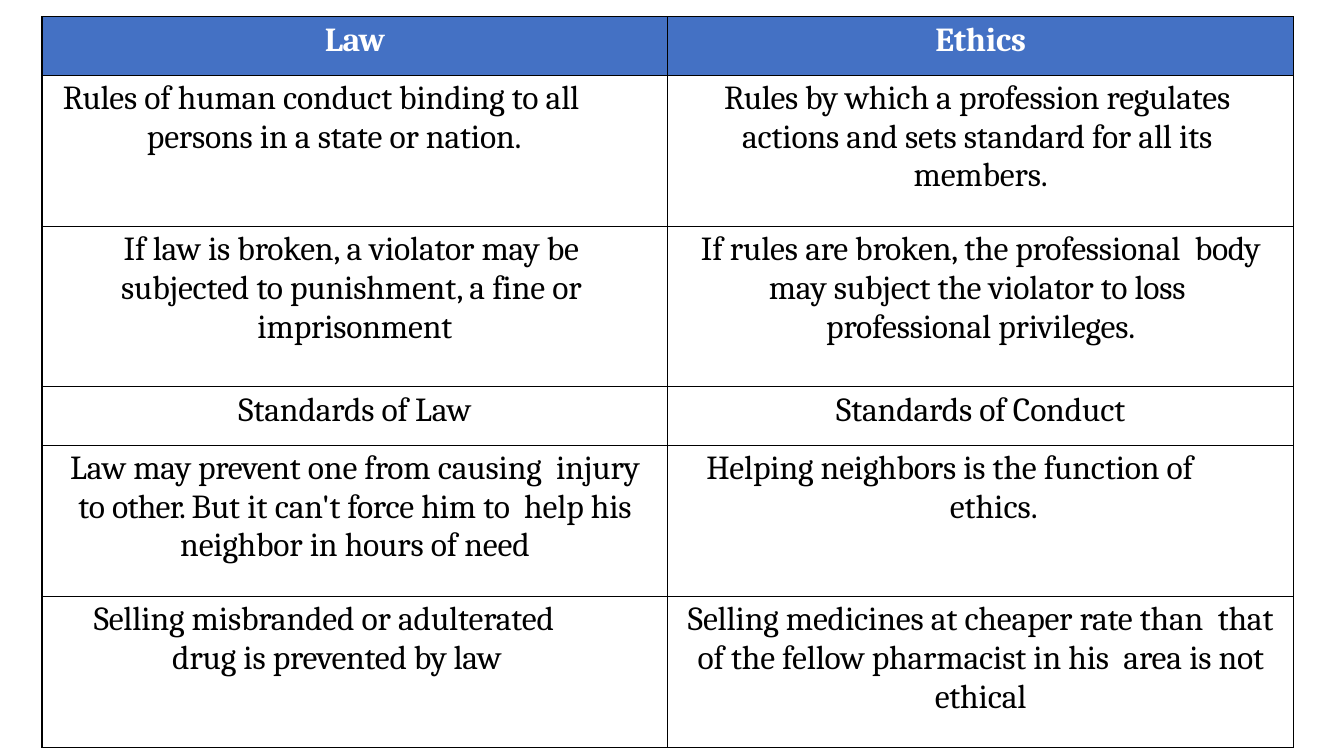
import pptx
import pptx.util
import pptx.dml.color
import pptx.enum.text
import pptx.oxml
import pptx.oxml.ns

THEME = {
    "font": "Cambria",
    "size": 24,
    "header_fill": "4471C4",
    "header_text": "FFFFFF",
    "text": "000000",
    "border": "000000",
    "border_width": 1,
}

HEADERS = [
    {"runs": [("Law", -0.3)]},
    {"runs": [("Ethics", -0.1)]},
]

COMPARISONS = [
    (
        {"runs": [("Rules ", -0.2),
                  ("of human conduct binding to all  persons in a state or nation.", -0.1)],
         "left": 75, "first": -60, "right": 15},
        {"runs": [("Rules by ", -0.2),
                  ("which a profession regulates  actions and sets standard for all its  members.", -0.1)],
         "left": 16.5, "right": 16.5},
    ),
    (
        {"runs": [("If ", -0.1), ("law ", -0.2), ("is broken, a violator ", -0.1),
                  ("may ", -0.2), ("be  subjected ", -0.1), ("to ", -0.2),
                  ("punishment, a fine or  imprisonment", -0.1)],
         "left": 37.5, "right": 37.5},
        {"runs": [("If rules ", -0.1), ("are ", -0.2), ("broken, the professional  ", -0.1),
                  ("body may ", -0.2),
                  ("subject the violator to loss  professional privileges.", -0.1)],
         "left": 22.5, "right": 22.5},
    ),
    (
        {"runs": [("Standards of Law", -0.1)]},
        {"runs": [("Standards of Conduct", -0.1)]},
    ),
    (
        {"runs": [("Law ", -0.1), ("may ", -0.3), ("prevent ", -0.2),
                  ("one from causing  injury to ", -0.1), ("other. ", -0.5), ("But ", -0.1),
                  ("it ", 0), ("can't force ", -0.2),
                  ("him to  help his neighbor in hours of need", -0.1)],
         "left": 9.5, "right": 9.5},
        {"runs": [("Helping neighbors is the function of  ", -0.1), ("ethics.", 0)],
         "left": 201.5, "first": -174},
    ),
    (
        {"runs": [("Selling misbranded or adulterated  drug is ", -0.1),
                  ("prevented by law", -0.2)],
         "left": 93, "first": -56, "right": 56},
        {"runs": [("Selling medicines at cheaper ", -0.1), ("rate ", -0.2),
                  ("than  that of the fellow pharmacist in his  area is not ethical", -0.1)],
         "left": 13.5, "right": 13.5},
    ),
]

TABLE_LEFT, TABLE_TOP = 30, 12
COLUMN_WIDTH = 447
ROW_HEIGHTS = [41.8, 108, 114.5, 41.8, 108, 108]


def points(value):
    return pptx.util.Pt(value)


def colour(name):
    return pptx.dml.color.RGBColor.from_string(THEME[name])


def write_text(cell, runs, left=0, first=0, right=0, text_colour="text", bold=False):
    paragraph = cell.text_frame.paragraphs[0]
    alignment = pptx.enum.text.PP_ALIGN
    paragraph.alignment = alignment.LEFT if first else alignment.CENTER
    paragraph.space_before = points(2.9)
    properties = paragraph._p.get_or_add_pPr()
    for attribute, value in (("marL", left), ("marR", right), ("indent", first)):
        properties.set(attribute, str(int(points(value))))
    for text, spacing in runs:
        run = paragraph.add_run()
        run.text = text
        run.font.name = THEME["font"]
        run.font.size = points(THEME["size"])
        run.font.bold = bold
        run.font.color.rgb = colour(text_colour)
        run._r.get_or_add_rPr().set("spc", str(round(spacing * 100)))


def add_borders(cell):
    properties = cell._tc.get_or_add_tcPr()
    for side in ("lnL", "lnR", "lnT", "lnB"):
        properties.append(pptx.oxml.parse_xml(
            f'<a:{side} {pptx.oxml.ns.nsdecls("a")} w="{int(points(THEME["border_width"]))}">'
            f'<a:solidFill><a:srgbClr val="{THEME["border"]}"/></a:solidFill></a:{side}>'))


def format_cell(cell, is_header):
    cell.margin_left = cell.margin_right = cell.margin_bottom = 0
    cell.margin_top = points(2.9)
    cell.vertical_anchor = pptx.enum.text.MSO_ANCHOR.TOP
    add_borders(cell)
    if is_header:
        cell.fill.solid()
        cell.fill.fore_color.rgb = colour("header_fill")
    else:
        cell.fill.background()


def main():
    presentation = pptx.Presentation()
    presentation.slide_width = points(960)
    presentation.slide_height = points(540)
    slide = presentation.slides.add_slide(presentation.slide_layouts[6])

    rows = [HEADERS, *COMPARISONS]
    table = slide.shapes.add_table(
        len(rows), len(HEADERS), points(TABLE_LEFT), points(TABLE_TOP),
        points(COLUMN_WIDTH * len(HEADERS)), points(sum(ROW_HEIGHTS))).table
    table.first_row = False
    table.horz_banding = False
    for column in table.columns:
        column.width = points(COLUMN_WIDTH)

    for row_index, (entries, height) in enumerate(zip(rows, ROW_HEIGHTS)):
        table.rows[row_index].height = points(height)
        is_header = row_index == 0
        for column_index, entry in enumerate(entries):
            cell = table.cell(row_index, column_index)
            format_cell(cell, is_header)
            write_text(cell, **entry, bold=is_header,
                       text_colour="header_text" if is_header else "text")

    presentation.save("out.pptx")


if __name__ == "__main__":
    main()
